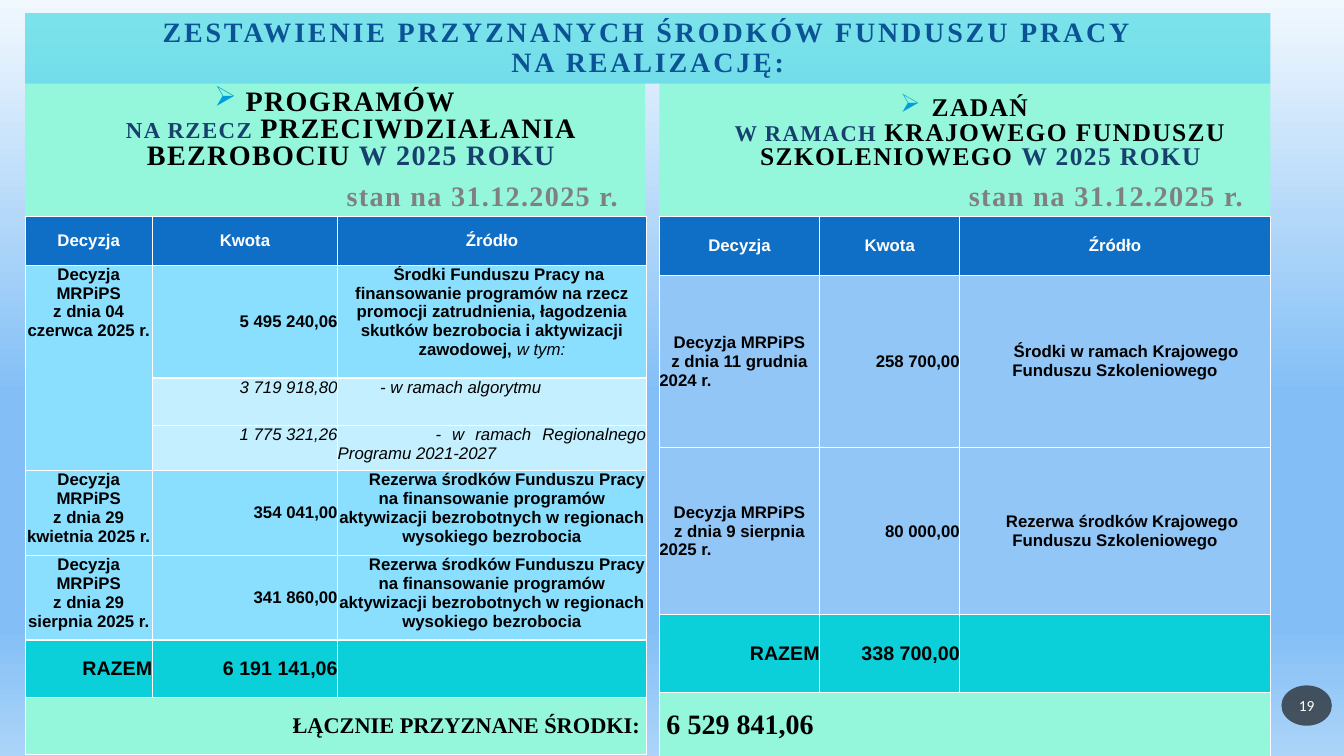
import pptx
import pptx.dml.color
import pptx.enum.shapes
import pptx.enum.text
import pptx.oxml
import pptx.oxml.ns
import pptx.util
from lxml import etree

Inches = pptx.util.Inches
Pt = pptx.util.Pt
qn = pptx.oxml.ns.qn
Shape = pptx.enum.shapes.MSO_SHAPE
Align = pptx.enum.text.PP_ALIGN
Anchor = pptx.enum.text.MSO_ANCHOR
SERIF, SANS = "Times New Roman", "Arial"
BLUE, SKY, PALE, SOFT = "0F6FC6", "8ADFFF", "C4EFFF", "91C6F7"
TEAL, MINT, NAVY, BLACK, WHITE = "0BD0D9", "94F7DC", "17406D", "000000", "FFFFFF"
LEFT, MID, RIGHT, JUST = Align.LEFT, Align.CENTER, Align.RIGHT, Align.JUSTIFY


def rgb(code):
    return pptx.dml.color.RGBColor.from_string(code)


def sub(parent, tag, **attrs):
    return etree.SubElement(parent, qn(tag), {k: str(v) for k, v in attrs.items()})


class Deck:
    """Holds the presentation, the current slide and its style."""

    def __init__(self, width, height):
        self.prs = pptx.Presentation()
        self.prs.slide_width, self.prs.slide_height = Inches(width), Inches(height)
        self.slide = self.prs.slides.add_slide(self.prs.slide_layouts[6])

    def ground(self, stops):
        fill = self.slide.background.fill
        fill.gradient()
        fill.gradient_angle = 270
        ramp = self.slide.element.find(".//" + qn("a:gsLst"))
        for old in list(ramp):
            ramp.remove(old)
        for pos, code in stops:
            sub(sub(ramp, "a:gs", pos=pos * 1000), "a:srgbClr", val=code)

    def box(self, kind, at, fill, alpha=None, inset=(0.1, 0.05), anchor=Anchor.MIDDLE):
        shape = self.slide.shapes.add_shape(kind, *map(Inches, at))
        shape.shadow.inherit = False
        shape.fill.solid()
        shape.fill.fore_color.rgb = rgb(fill)
        shape.line.fill.background()
        if alpha:
            color = shape.element.spPr.find(qn("a:solidFill"))[0]
            sub(color, "a:alpha", val=alpha * 1000)
        frame = shape.text_frame
        frame.word_wrap = True
        frame.vertical_anchor = anchor
        frame.margin_left = frame.margin_right = Inches(inset[0])
        frame.margin_top = frame.margin_bottom = Inches(inset[1])
        return frame

    def para(self, par, runs, size, color=BLACK, font=SANS, align=MID, bold=True,
             italic=False, track=0, lead=None, first=0, left=0, right=0, mark=None):
        """Fill a paragraph; runs is a string or (text, font changes) pairs."""
        par.alignment = align
        if lead:
            par.line_spacing = lead
        props = par._p.get_or_add_pPr()
        for key, value in (("marL", left), ("marR", right), ("indent", first)):
            if value:
                props.set(key, str(Inches(value)))
        if mark:
            sub(sub(props, "a:buClr"), "a:srgbClr", val="009DD9")
            sub(props, "a:buChar", char=mark)
        base = par.font
        base.name, base.size, base.bold, base.italic = font, Pt(size), bold, italic
        base.color.rgb = rgb(color)
        for text, diff in [(runs, {})] if isinstance(runs, str) else runs:
            for n, line in enumerate(text.split("\n")):
                if n:
                    par.add_line_break()
                if not line:
                    continue
                run = par.add_run()
                run.text = line
                if track:
                    run._r.get_or_add_rPr().set("spc", str(track * 100))
                for key, value in diff.items():
                    if key == "color":
                        run.font.color.rgb = rgb(value)
                    else:
                        setattr(run.font, key, value)

    def head(self, at, size, runs, date):
        frame = self.box(Shape.RECTANGLE, at, MINT, anchor=Anchor.BOTTOM)
        style = dict(font=SERIF, track=1, lead=0.8)
        self.para(frame.paragraphs[0], runs, size, left=0.31, first=-0.31,
                  mark="➢", **style)
        par = frame.add_paragraph()
        par.space_before = Pt(10)
        self.para(par, "stan na 31.12.2025 r.", date, "808080", align=RIGHT,
                  right=0.17, **style)

    def table(self, at, cols, rows, fills):
        table = self.slide.shapes.add_table(
            len(rows), len(cols), *map(Inches, at), Inches(sum(cols)),
            Inches(sum(rows))).table
        table.horz_banding = False
        for col, width in zip(table.columns, cols):
            col.width = Inches(width)
        for row, height, fill in zip(table.rows, rows, fills):
            row.height = Inches(height)
            for cell in row.cells:
                self.cell(cell, fill)
        return table

    def cell(self, cell, fill):
        cell.margin_left = cell.margin_right = 0
        cell.margin_top = cell.margin_bottom = 0
        cell.vertical_anchor = Anchor.MIDDLE
        props = cell._tc.get_or_add_tcPr()
        for side in ("a:lnL", "a:lnR", "a:lnT", "a:lnB"):
            line = sub(props, side, w=Pt(1))
            sub(sub(line, "a:solidFill"), "a:srgbClr", val=WHITE)
        cell.fill.solid()
        cell.fill.fore_color.rgb = rgb(fill)

    def text(self, cell, runs, size=12, top=False, **style):
        if top:
            cell.vertical_anchor = Anchor.TOP
        self.para(cell.text_frame.paragraphs[0], runs, size, **style)

    def heads(self, table):
        for cell, name in zip(table.rows[0].cells, ("Decyzja", "Kwota", "Źródło")):
            self.text(cell, name, color=WHITE)

    def sums(self, table, row, total):
        for col, text in enumerate(("RAZEM", total)):
            self.text(table.cell(row, col), text, 14, align=RIGHT)
        table.cell(row + 1, 0).merge(table.cell(row + 1, 2))


def main():
    deck = Deck(13.33, 7.5)
    deck.ground([(0, "F1F8FE"), (52, "83BFF6"), (83, "83BFF6"), (100, "ACD4F9")])

    blue = {"color": NAVY}
    deck.head((0.25, 0.83, 6.15, 1.32), 20.1, [
        ("PROGRAMÓW\n", {}), ("NA RZECZ ", {"size": Pt(16.3), **blue}),
        ("PRZECIWDZIAŁANIA BEZROBOCIU", {}), (" W 2025 ROKU", blue)], 20.1)
    deck.head((6.54, 0.83, 6.06, 1.32), 18.2, [
        ("ZADAŃ\n", {}), ("W RAMACH ", {"size": Pt(16.1), **blue}),
        ("KRAJOWEGO FUNDUSZU SZKOLENIOWEGO ", {}), ("W 2025 ROKU", blue)], 20.3)

    labor = deck.table((0.25, 2.15), (1.26, 1.84, 3.06),
                       (0.48, 1.12, 0.47, 0.45, 0.84, 0.84, 0.57, 0.57),
                       (BLUE, SKY, PALE, PALE, SKY, SKY, TEAL, MINT))
    deck.heads(labor)
    labor.cell(1, 0).merge(labor.cell(3, 0))
    goal = [("Środki Funduszu Pracy na finansowanie programów na rzecz promocji "
             "zatrudnienia, łagodzenia skutków bezrobocia i aktywizacji zawodowej, ", {}),
            ("w tym:", {"bold": False, "italic": True})]
    spare = ("Rezerwa środków Funduszu Pracy na finansowanie programów aktywizacji "
             "bezrobotnych w regionach wysokiego bezrobocia")
    for row, day, sum_, source, first in (
            (1, "04 czerwca", "5 495 240,06", goal, 0.14),
            (4, "29 kwietnia", "354 041,00", spare, 0.3),
            (5, "29 sierpnia", "341 860,00", spare, 0.3)):
        deck.text(labor.cell(row, 0), f"Decyzja MRPiPS\nz dnia {day} 2025 r.", top=True)
        deck.text(labor.cell(row, 1), sum_, align=RIGHT)
        deck.text(labor.cell(row, 2), source, top=True, first=first)
    thin = dict(top=True, bold=False, italic=True)
    for row, sum_, source, align, first in (
            (2, "3 719 918,80", "- w ramach algorytmu", LEFT, 0.42),
            (3, "1 775 321,26", "- w ramach Regionalnego Programu 2021-2027", JUST, 0.97)):
        deck.text(labor.cell(row, 1), sum_, align=RIGHT, **thin)
        deck.text(labor.cell(row, 2), source, align=align, first=first, **thin)
    deck.sums(labor, 6, "6 191 141,06")
    deck.text(labor.cell(7, 0), "ŁĄCZNIE PRZYZNANE ŚRODKI:", 16, font=SERIF,
              align=RIGHT, right=0.06)

    train = deck.table((6.54, 2.15), (1.59, 1.39, 3.08),
                       (0.58, 1.71, 1.66, 0.77, 0.65), (BLUE, SOFT, SOFT, TEAL, MINT))
    deck.heads(train)
    for row, day, year, sum_, source, first in (
            (1, "11 grudnia", 2024, "258 700,00", "Środki w ramach", 0.22),
            (2, "9 sierpnia", 2025, "80 000,00", "Rezerwa środków", 0.14)):
        cell = train.cell(row, 0)
        deck.text(cell, f"Decyzja MRPiPS\nz dnia {day}")
        deck.para(cell.text_frame.add_paragraph(), f"{year} r.", 12, align=LEFT)
        deck.text(train.cell(row, 1), sum_, align=RIGHT)
        deck.text(train.cell(row, 2), f"{source} Krajowego Funduszu Szkoleniowego",
                  first=first)
    deck.sums(train, 3, "338 700,00")
    deck.text(train.cell(4, 0), "6 529 841,06", 20, font=SERIF, align=LEFT, left=0.07)

    page = deck.box(Shape.OVAL, (12.71, 6.8, 0.5, 0.4), "1D1D1D", 70, (0.02, 0.05))
    deck.para(page.paragraphs[0], "19", 11, WHITE, "Calibri", bold=False)
    title = deck.box(Shape.RECTANGLE, (0.25, 0.13, 12.35, 0.7), TEAL, 50, (0.2, 0.2))
    deck.para(title.paragraphs[0],
              "ZESTAWIENIE PRZYZNANYCH ŚRODKÓW FUNDUSZU PRACY\nNA REALIZACJĘ:",
              20, "0B5394", SERIF, track=2, lead=0.9)
    deck.prs.save("out.pptx")


if __name__ == "__main__":
    main()
